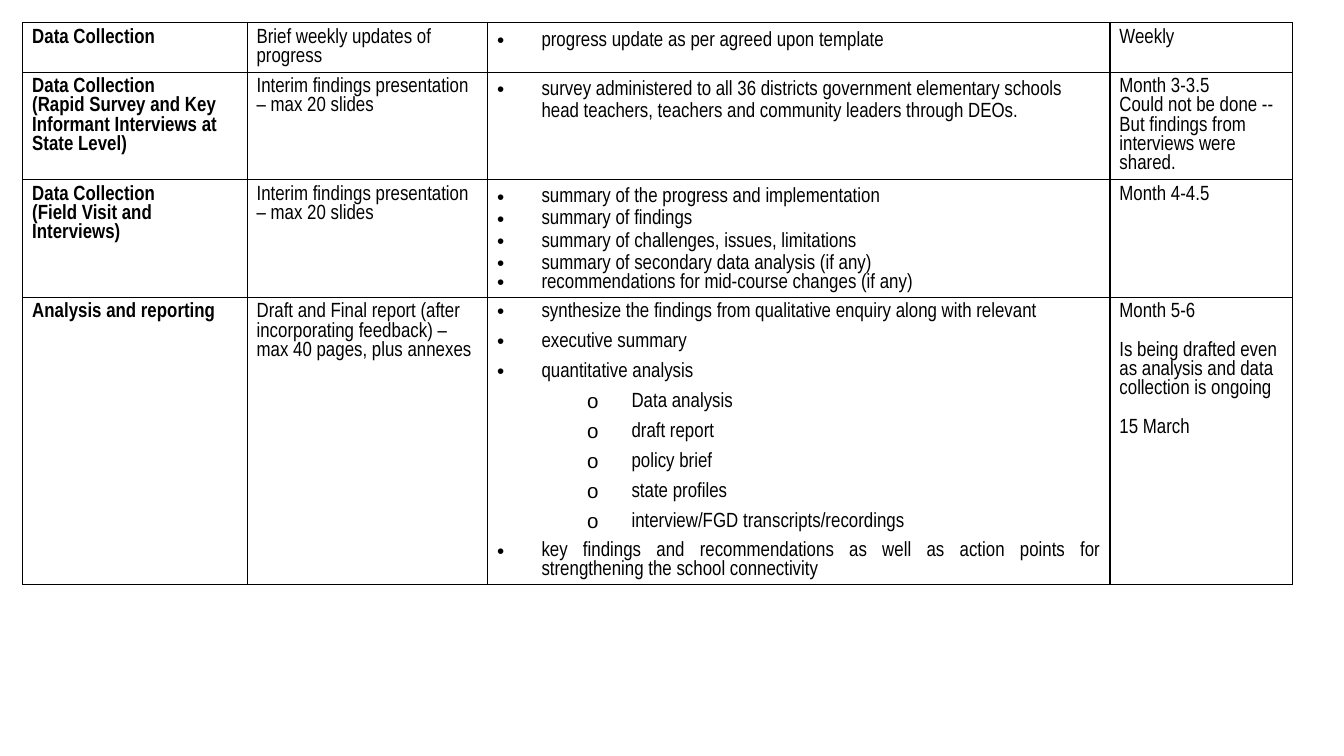
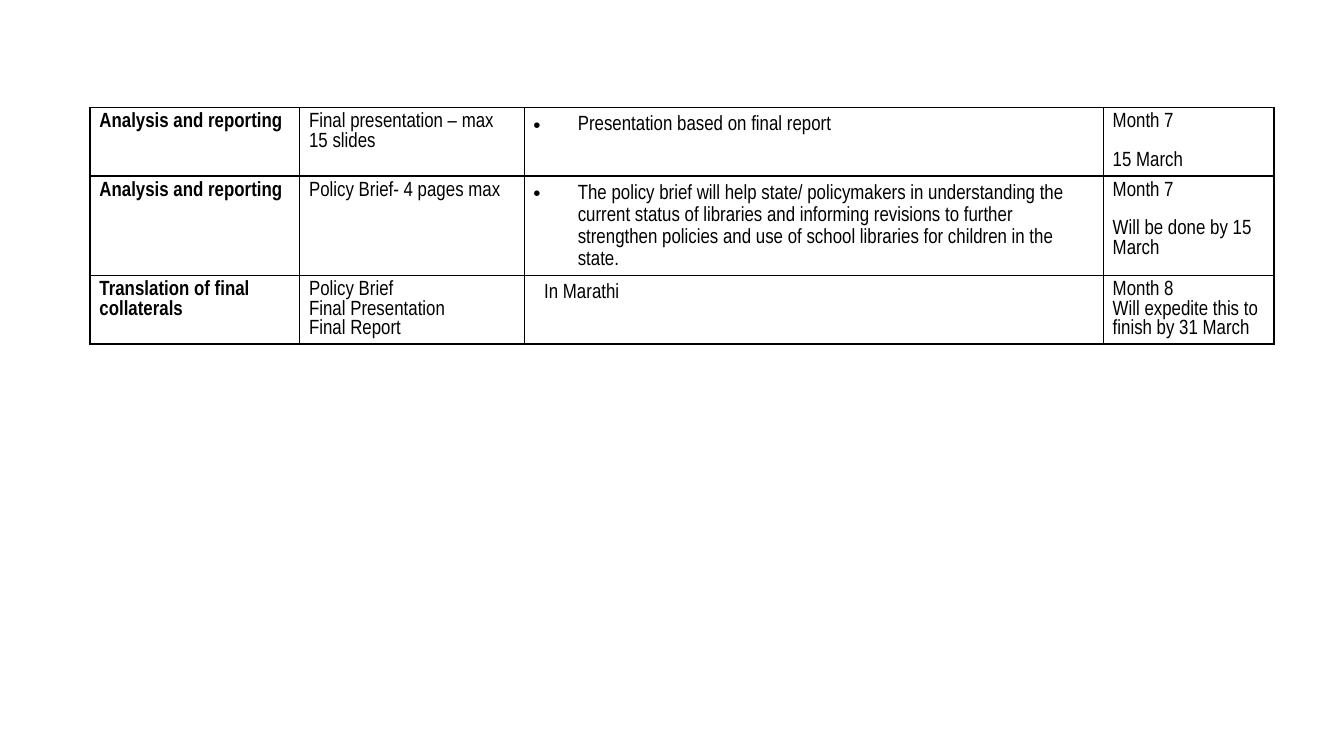
from dataclasses import dataclass

from lxml import etree
from pptx import Presentation
from pptx.dml.color import RGBColor
from pptx.enum.text import PP_ALIGN
from pptx.oxml.ns import qn
from pptx.util import Inches, Pt

JUSTIFY = PP_ALIGN.JUSTIFY
COLORS = {"text": "000000", "border": "000000"}
FONT = "Arial Narrow"
BULLET_FONT = "Arial"
FONT_SIZE = Pt(11)
BORDER_WIDTH = Pt(0.75)
BLANK_LAYOUT = 6
SLIDE_WIDTH = Inches(10)
SLIDE_HEIGHT = SLIDE_WIDTH * 9 // 16


@dataclass(frozen=True)
class Para:
    text: str
    bullet: str = ""
    left: float = 0
    indent: float = 0
    spacing: float | None = None
    before: float = 0
    level: int = 0
    justify: bool = False


@dataclass(frozen=True)
class Row:
    height: float
    phase: list[Para]
    output: list[Para]
    details: list[Para]
    timing: list[Para]


@dataclass(frozen=True)
class Plan:
    left: float
    top: float
    widths: list[float]
    rows: list[Row]


# Paragraph styles
def lines(*texts: str) -> list[Para]:
    return [Para(t) for t in texts]


def blocks(*texts: str) -> list[Para]:
    """Paragraphs set one line apart."""
    return [Para(t, before=10.3 if i else 0) for i, t in enumerate(texts)]


def point(text: str, spacing: float = 1.15, before: float = 0,
          justify: bool = False) -> Para:
    return Para(text, "•", 0.33, -0.33, spacing, before, justify=justify)


def report_point(text: str, before: float = 6) -> Para:
    return point(text, 0.97, before, justify=True)


def sub_point(text: str) -> Para:
    return Para(text, "o", 1, -0.33, 0.97, 6, level=1)


# Content
INTERIM = "Interim findings presentation – max 20 slides"
REPORTING = "Analysis and reporting"

PLANS = [
    Plan(0.17, 0.17, [1.67, 1.79, 4.63, 1.36], [
        Row(0.36, lines("Data Collection"),
            lines("Brief weekly updates of progress"),
            [point("progress update as per agreed upon template")],
            lines("Weekly")),
        Row(0.8,
            lines("Data Collection",
                  "(Rapid Survey and Key Informant Interviews at State Level)"),
            lines(INTERIM),
            [point("survey administered to all 36 districts government "
                   "elementary schools head teachers, teachers and community "
                   "leaders through DEOs.")],
            lines("Month 3-3.5\nCould not be done -- But findings from "
                  "interviews were shared.")),
        Row(0.87, lines("Data Collection", "(Field Visit and Interviews)"),
            lines(INTERIM),
            [point("summary of the progress and implementation"),
             point("summary of findings"),
             point("summary of challenges, issues, limitations"),
             point("summary of secondary data analysis (if any)"),
             point("recommendations for mid-course changes (if any)", 0.97)],
            lines("Month 4-4.5")),
        Row(2.12, lines(REPORTING),
            lines("Draft and Final report (after incorporating feedback) – "
                  "max 40 pages, plus annexes"),
            [report_point("synthesize the findings from qualitative enquiry "
                          "along with relevant", before=0),
             report_point("executive summary"),
             report_point("quantitative analysis"),
             sub_point("Data analysis"),
             sub_point("draft report"),
             sub_point("policy brief"),
             sub_point("state profiles"),
             sub_point("interview/FGD transcripts/recordings"),
             report_point("key findings and recommendations as well as action "
                          "points for strengthening the school connectivity")],
            blocks("Month 5-6",
                   "Is being drafted even as analysis and data collection is "
                   "ongoing",
                   "15 March")),
    ]),
    Plan(0.67, 0.8, [1.56, 1.67, 4.31, 1.27], [
        Row(0.51, lines(REPORTING),
            lines("Final presentation – max 15 slides"),
            [point("Presentation based on final report")],
            blocks("Month 7", "15 March")),
        Row(0.74, lines(REPORTING),
            lines("Policy Brief- 4 pages max"),
            [point("The policy brief will help state/ policymakers in "
                   "understanding the current status of libraries and "
                   "informing revisions to further strengthen policies and "
                   "use of school libraries for children in the state.")],
            blocks("Month 7", "Will be done by 15 March")),
        Row(0.51, lines("Translation of final collaterals"),
            lines("Policy Brief\nFinal Presentation\nFinal Report"),
            [Para("In Marathi", left=0.33, indent=-0.25, spacing=1.15)],
            lines("Month 8\nWill expedite this to finish by 31 March")),
    ]),
]


# Drawing
def sub(parent, tag: str, **attrs: str):
    return etree.SubElement(parent, qn(tag), attrs)


def set_borders(cell) -> None:
    tc_pr = cell._tc.get_or_add_tcPr()
    for i, side in enumerate(("a:lnL", "a:lnR", "a:lnT", "a:lnB")):
        ln = etree.Element(qn(side), w=str(int(BORDER_WIDTH)))
        sub(sub(ln, "a:solidFill"), "a:srgbClr", val=COLORS["border"])
        tc_pr.insert(i, ln)


def format_paragraph(p, para: Para) -> None:
    p_pr = p._p.get_or_add_pPr()
    p_pr.set("marL", str(int(Inches(para.left))))
    p_pr.set("indent", str(int(Inches(para.indent))))
    if para.bullet:
        sub(sub(p_pr, "a:buClr"), "a:srgbClr", val=COLORS["text"])
        sub(p_pr, "a:buFont", typeface=BULLET_FONT)
        sub(p_pr, "a:buChar", char=para.bullet)
    else:
        sub(p_pr, "a:buNone")
    p.level = para.level
    if para.spacing:
        p.line_spacing = para.spacing
    if para.before:
        p.space_before = Pt(para.before)
    if para.justify:
        p.alignment = JUSTIFY


def add_text(p, text: str, bold: bool) -> None:
    for i, line in enumerate(text.split("\n")):
        if i:
            p.add_line_break()
        r = p.add_run()
        r.text = line
        r.font.name = FONT
        r.font.size = FONT_SIZE
        r.font.bold = bold
        r.font.color.rgb = RGBColor.from_string(COLORS["text"])


def fill_cell(cell, paras: list[Para], bold: bool) -> None:
    cell.margin_left = cell.margin_right = Inches(0.07)
    cell.margin_top = cell.margin_bottom = Inches(0.04)
    cell.fill.background()
    set_borders(cell)
    tf = cell.text_frame
    for i, para in enumerate(paras):
        p = tf.add_paragraph() if i else tf.paragraphs[0]
        format_paragraph(p, para)
        add_text(p, para.text, bold)


def add_plan(slide, plan: Plan) -> None:
    table = slide.shapes.add_table(
        len(plan.rows), len(plan.widths), Inches(plan.left), Inches(plan.top),
        Inches(sum(plan.widths)), Inches(sum(r.height for r in plan.rows))).table
    table.first_row = table.horz_banding = False
    for col, width in zip(table.columns, plan.widths):
        col.width = Inches(width)
    for i, row in enumerate(plan.rows):
        table.rows[i].height = Inches(row.height)
        cells = (row.phase, row.output, row.details, row.timing)
        for j, paras in enumerate(cells):
            fill_cell(table.cell(i, j), paras, bold=j == 0)


def main() -> None:
    prs = Presentation()
    prs.slide_width, prs.slide_height = SLIDE_WIDTH, SLIDE_HEIGHT
    for plan in PLANS:
        add_plan(prs.slides.add_slide(prs.slide_layouts[BLANK_LAYOUT]), plan)
    prs.save("out.pptx")


if __name__ == "__main__":
    main()
